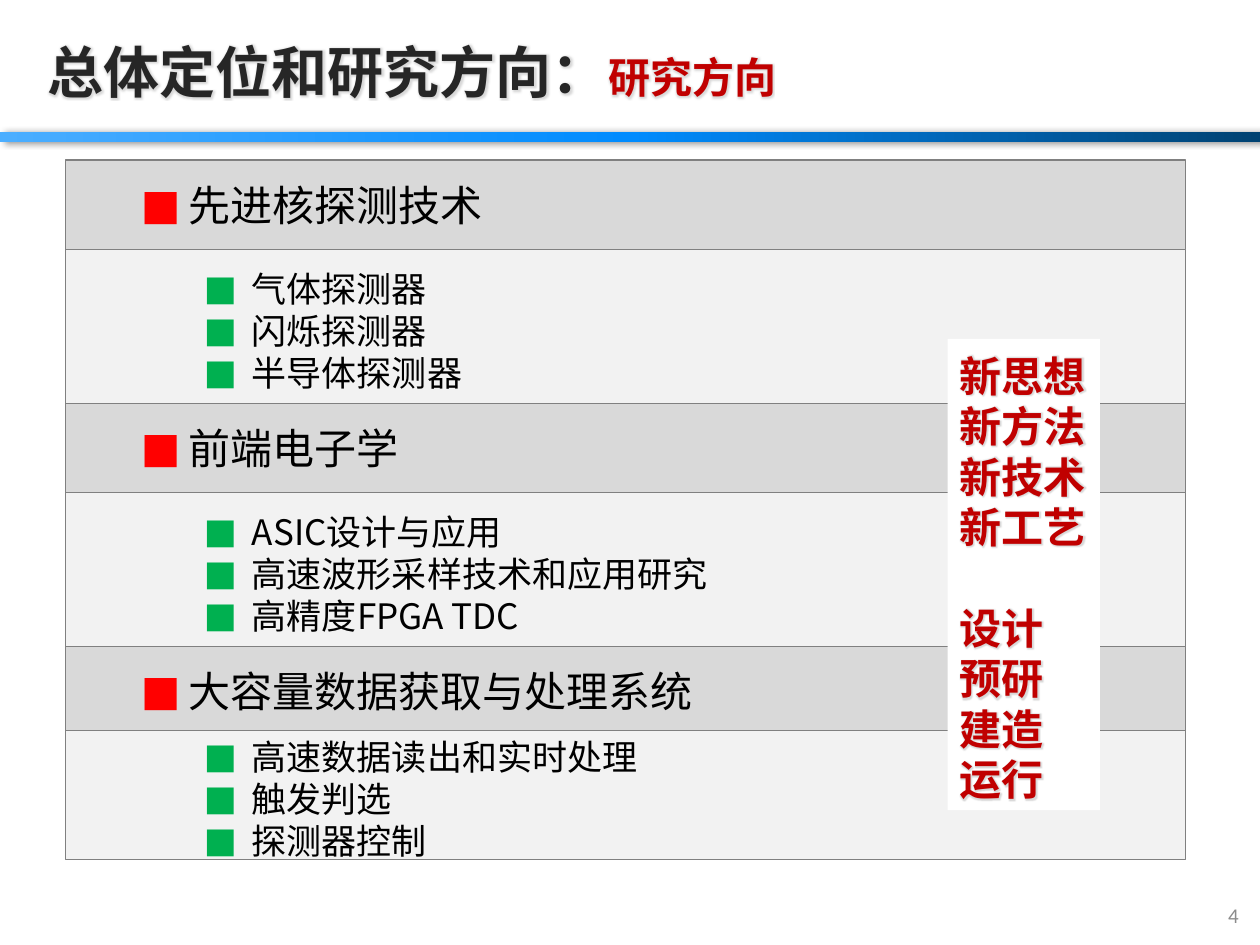
import pptx
import pptx.dml.color
import pptx.enum.shapes
import pptx.enum.text
import pptx.oxml
import pptx.oxml.ns
import pptx.util

Inches = pptx.util.Inches
Pt = pptx.util.Pt
ANCHOR = pptx.enum.text.MSO_ANCHOR
ALIGN = pptx.enum.text.PP_ALIGN

COLORS = {
    "header": "D9D9D9", "detail": "F2F2F2", "border": "808080",
    "white": "FFFFFF", "black": "000000", "title": "262626",
    "accent": "C00000", "red": "FF0000", "green": "00B050",
    "number": "8C8C8C", "halo": "BFBFBF",
    "navy": "004272", "blue": "008BFE", "sky": "4BAEFF",
}
CJK = "Noto Sans CJK SC"
LATIN = "Calibri"
LINE_HEIGHT = 1.2


def rgb(name):
    return pptx.dml.color.RGBColor.from_string(COLORS[name])


def xml(tag, inner="", attributes=""):
    return pptx.oxml.parse_xml(
        f'<a:{tag} {pptx.oxml.ns.nsdecls("a")} {attributes}>{inner}</a:{tag}>')


def color_xml(name, alpha=100):
    return f'<a:srgbClr val="{COLORS[name]}"><a:alpha val="{alpha * 1000}"/></a:srgbClr>'


def add_text(paragraph, text, size, color="black", font=CJK, bold=False, halo=False):
    run = paragraph.add_run()
    run.text = text
    run.font.size = Pt(size)
    run.font.bold = bold
    run.font.color.rgb = rgb(color)
    properties = run.font._element
    if halo:
        glow = f'<a:glow rad="{Pt(3)}">{color_xml("halo", 60)}</a:glow>'
        properties.append(xml("effectLst", glow))
    run.font.name = font
    properties.append(xml("ea", attributes=f'typeface="{font}"'))


def add_bullet(paragraph, color, margin, level):
    paragraph.level = level
    properties = paragraph._p.get_or_add_pPr()
    properties.set("marL", str(Inches(margin)))
    properties.set("indent", str(Inches(-0.38)))
    properties.append(xml("buClr", color_xml(color)))
    properties.append(xml("buFont", attributes=f'typeface="{LATIN}"'))
    properties.append(xml("buChar", attributes='char="■"'))


class Deck:
    """Holds the house style and the current slide."""

    def __init__(self, width, height):
        self.presentation = pptx.Presentation()
        self.presentation.slide_width = Inches(width)
        self.presentation.slide_height = Inches(height)
        self.slide = self.presentation.slides.add_slide(
            self.presentation.slide_layouts[6])

    def box(self, left, top, width, height, fill=None, border=None):
        shape = self.slide.shapes.add_shape(
            pptx.enum.shapes.MSO_SHAPE.RECTANGLE,
            *map(Inches, (left, top, width, height)))
        shape.shadow.inherit = False
        if fill:
            shape.fill.solid()
            shape.fill.fore_color.rgb = rgb(fill)
        if border:
            shape.line.color.rgb = rgb(border)
            shape.line.width = Pt(0.75)
        else:
            shape.line.fill.background()
        shape.text_frame.word_wrap = True
        return shape

    def label(self, left, top, width, height, runs, align=ALIGN.LEFT):
        frame = self.slide.shapes.add_textbox(
            *map(Inches, (left, top, width, height))).text_frame
        frame.word_wrap = True
        frame.vertical_anchor = ANCHOR.MIDDLE
        frame.paragraphs[0].alignment = align
        for text, style in runs:
            add_text(frame.paragraphs[0], text, **style)

    def lines(self, frame, texts, size, **style):
        """Fill a frame with one evenly pitched paragraph per text."""
        for index, text in enumerate(texts):
            paragraph = frame.paragraphs[0] if index == 0 else frame.add_paragraph()
            paragraph.alignment = ALIGN.LEFT
            if len(texts) > 1:
                paragraph.line_spacing = Pt(size * LINE_HEIGHT)
            add_text(paragraph, text, size, **style)
        return frame.paragraphs

    def band(self, top, height, texts, size, fill, bullet, margin, level):
        frame = self.box(0.52, top, 8.89, height, fill, "border").text_frame
        frame.vertical_anchor = ANCHOR.MIDDLE
        if len(texts) > 1:
            frame.margin_top, frame.margin_bottom = Inches(0.06), 0
        for paragraph in self.lines(frame, texts, size):
            add_bullet(paragraph, bullet, margin, level)

    def divider(self, top, height):
        bar = self.box(0, top, 10, height)
        bar.fill.gradient()
        bar.fill.gradient_angle = 180
        stops = bar.fill._fill._gradFill.find(pptx.oxml.ns.qn("a:gsLst"))
        stops.clear()
        for position, color in ((0, "navy"), (50, "blue"), (100, "sky")):
            stops.append(xml("gs", color_xml(color), f'pos="{position * 1000}"'))
        effects = bar._element.spPr.find(pptx.oxml.ns.qn("a:effectLst"))
        effects.append(xml("outerShdw", color_xml("black", 40),
                           f'blurRad="{Pt(4)}" dist="{Pt(3)}" dir="0"'))

    def callout(self, left, top, width, height, groups, size):
        frame = self.box(left, top, width, height, "white").text_frame
        frame.vertical_anchor = ANCHOR.TOP
        frame.margin_top, frame.margin_right = Inches(0.09), 0
        paragraphs = self.lines(frame, sum(groups, []), size,
                                color="accent", bold=True, halo=True)
        # One line of space between the two groups
        paragraphs[len(groups[0])].space_before = Pt(size * LINE_HEIGHT)


def main():
    deck = Deck(10, 7.5)

    # Research directions: heading, topics, top and height of the topics
    directions = [
        ("先进核探测技术", ["气体探测器", "闪烁探测器", "半导体探测器"], 1.98, 1.22),
        ("前端电子学",
         ["ASIC设计与应用", "高速波形采样技术和应用研究", "高精度FPGA TDC"], 3.91, 1.22),
        ("大容量数据获取与处理系统",
         ["高速数据读出和实时处理", "触发判选", "探测器控制"], 5.8, 1.02),
    ]
    for index, (heading, _, _, _) in enumerate(directions):
        deck.band(1.27 + index * 1.93, 0.71, [heading], 24, "header", "red", 0.88, 1)

    # Title and divider
    deck.label(0.28, 0.21, 9.04, 0.71, [
        ("总体定位和研究方向：", dict(size=32, color="title", bold=True, halo=True)),
        ("研究方向", dict(size=24, color="accent", bold=True, halo=True)),
    ])
    deck.divider(1.05, 0.08)

    # Topics under each heading
    for _, topics, top, height in directions:
        deck.band(top, height, topics, 20, "detail", "green", 1.38, 2)

    # Goals and stages
    deck.callout(7.52, 2.69, 1.21, 3.74, [
        ["新思想", "新方法", "新技术", "新工艺"],
        ["设计", "预研", "建造", "运行"],
    ], 24)

    # Slide number
    deck.label(7.6, 7.06, 2.33, 0.4,
               [("4", dict(size=12, color="number", font=LATIN))], ALIGN.RIGHT)

    deck.presentation.save("out.pptx")


if __name__ == "__main__":
    main()
